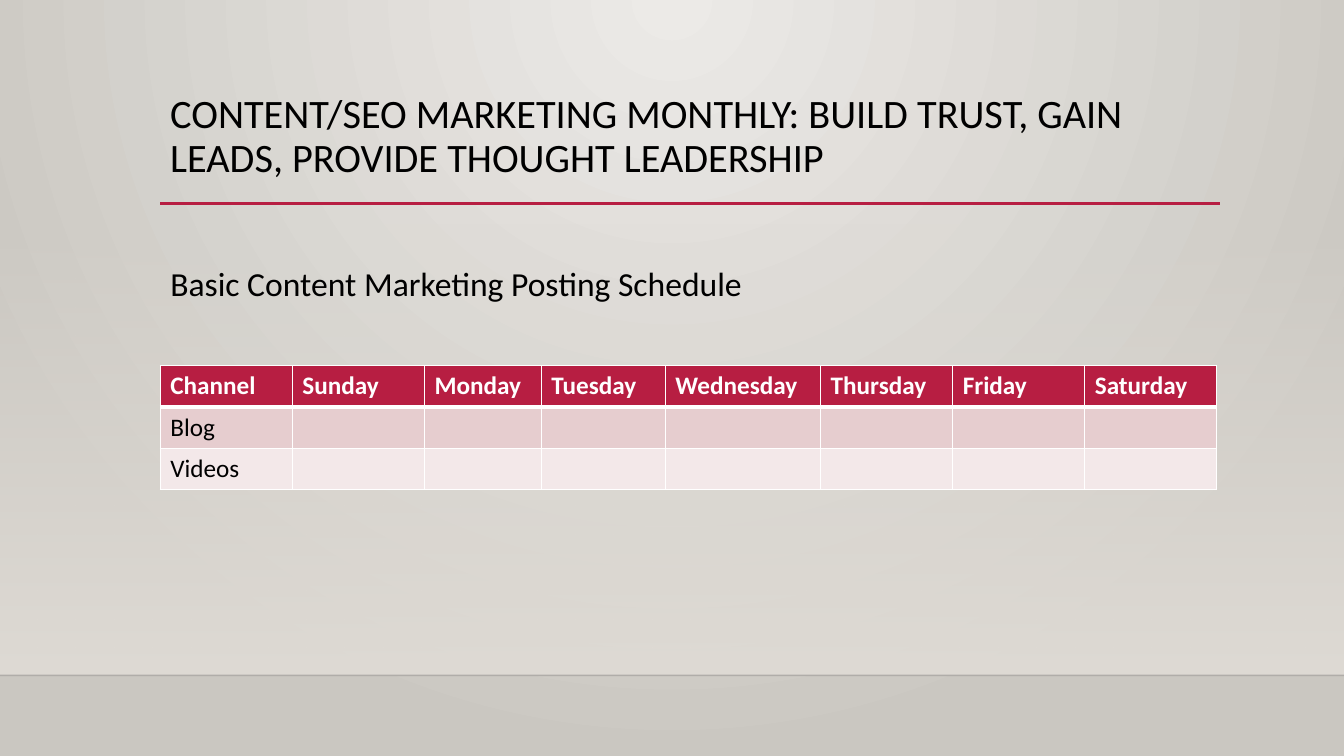
from lxml import etree
from pptx import Presentation
from pptx.dml.color import RGBColor
from pptx.enum.shapes import MSO_CONNECTOR, MSO_SHAPE
from pptx.oxml.ns import qn
from pptx.util import Inches, Pt

FONT = "Calibri"
BLACK, WHITE, CRIMSON, SAND = "000000", "FFFFFF", "B71E42", "DFDBD5"
LEFT, CONTENT_WIDTH = 1.59, 10.5
COLUMN_WIDTHS = [1.31, 1.31, 1.16, 1.23, 1.54, 1.31, 1.31, 1.31]
ROW_HEIGHT = 0.41
SCHEDULE = [
    ["Channel", "Sunday", "Monday", "Tuesday", "Wednesday", "Thursday", "Friday", "Saturday"],
    ["Blog"],
    ["Videos"],
]
ROW_FILLS = [CRIMSON, "E6CDCF", "F3E8E9"]


def rgb(value):
    return RGBColor.from_string(value)


def set_opacity(color_element, percent):
    etree.SubElement(color_element, qn("a:alpha"), val=str(percent * 1000))


def set_gradient(fill, start, end):
    fill.gradient()
    for stop, position, color in zip(fill.gradient_stops, (0, 1), (start, end)):
        stop.position = position
        stop.color.rgb = rgb(color)


def add_background(slide):
    """Light glow spreading from the top centre."""
    set_gradient(slide.background.fill, "ECEAE7", "CAC7C1")
    gradient = slide.element.find(".//" + qn("a:gradFill"))
    glow = etree.Element(qn("a:path"), path="circle")
    etree.SubElement(glow, qn("a:fillToRect"), l="43000", t="0", r="43000", b="100000")
    gradient.replace(gradient.find(qn("a:lin")), glow)


def add_fading_panel(slide, top, height):
    """Full-width panel, transparent at the top and solid at the bottom."""
    panel = slide.shapes.add_shape(
        MSO_SHAPE.RECTANGLE, 0, Inches(top), Inches(13.33), Inches(height))
    panel.shadow.inherit = False
    panel.line.fill.background()
    set_gradient(panel.fill, SAND, SAND)
    panel.fill.gradient_angle = 270
    set_opacity(panel.element.spPr.find(".//" + qn("a:srgbClr")), 0)


def add_rule(slide, left, right, y, color, width, opacity=100):
    rule = slide.shapes.add_connector(
        MSO_CONNECTOR.STRAIGHT, Inches(left), Inches(y), Inches(right), Inches(y))
    rule.line.color.rgb = rgb(color)
    rule.line.width = Pt(width)
    properties = rule.element.spPr
    if opacity < 100:
        set_opacity(properties.find(".//" + qn("a:srgbClr")), opacity)
    etree.SubElement(properties, qn("a:effectLst"))


def add_run(paragraph, text, size, color, bold=False):
    run = paragraph.add_run()
    run.text = text
    run.font.name = FONT
    run.font.size = Pt(size)
    run.font.bold = bold
    run.font.color.rgb = rgb(color)


def add_text(slide, top, width, height, text, size, line_spacing=1.0):
    box = slide.shapes.add_textbox(Inches(LEFT), Inches(top), Inches(width), Inches(height))
    box.text_frame.word_wrap = True
    paragraph = box.text_frame.paragraphs[0]
    paragraph.line_spacing = line_spacing
    add_run(paragraph, text, size, BLACK)


def set_borders(cell, widths):
    """Draw white borders; widths maps each side tag to points."""
    properties = cell._tc.get_or_add_tcPr()
    for index, (side, width) in enumerate(widths.items()):
        border = etree.Element(qn(f"a:{side}"), w=str(Pt(width)))
        fill = etree.SubElement(border, qn("a:solidFill"))
        etree.SubElement(fill, qn("a:srgbClr"), val=WHITE)
        properties.insert(index, border)


def add_schedule(slide, top):
    row_count = len(SCHEDULE)
    table = slide.shapes.add_table(
        row_count, len(COLUMN_WIDTHS), Inches(LEFT), Inches(top),
        Inches(CONTENT_WIDTH), Inches(ROW_HEIGHT * row_count)).table
    for column, width in zip(table.columns, COLUMN_WIDTHS):
        column.width = Inches(width)
    for row_index, (labels, fill) in enumerate(zip(SCHEDULE, ROW_FILLS)):
        table.rows[row_index].height = Inches(ROW_HEIGHT)
        header = row_index == 0
        for column_index in range(len(COLUMN_WIDTHS)):
            cell = table.cell(row_index, column_index)
            cell.fill.solid()
            cell.fill.fore_color.rgb = rgb(fill)
            set_borders(cell, {"lnL": 1, "lnR": 1, "lnT": 3 if row_index == 1 else 1,
                               "lnB": 3 if header else 1})
            if column_index < len(labels):
                add_run(cell.text_frame.paragraphs[0], labels[column_index], 18,
                        WHITE if header else BLACK, bold=header)


def main():
    presentation = Presentation()
    presentation.slide_width = Inches(13.33)
    presentation.slide_height = Inches(7.5)
    slide = presentation.slides.add_slide(presentation.slide_layouts[6])
    add_background(slide)
    add_fading_panel(slide, 2.21, 4.49)
    add_rule(slide, 0, 13.33, 6.7, "000001", 1, opacity=20)
    add_rule(slide, LEFT, 12.1, 2.02, CRIMSON, 2.5)
    add_text(slide, 0.88, CONTENT_WIDTH, 1.15,
             "CONTENT/SEO MARKETING MONTHLY: BUILD TRUST, GAIN LEADS, "
             "PROVIDE THOUGHT LEADERSHIP", 28.8, line_spacing=0.9)
    add_schedule(slide, 3.63)
    add_text(slide, 2.56, 6.55, 0.5, "Basic Content Marketing Posting Schedule", 24)
    presentation.save("out.pptx")


if __name__ == "__main__":
    main()
